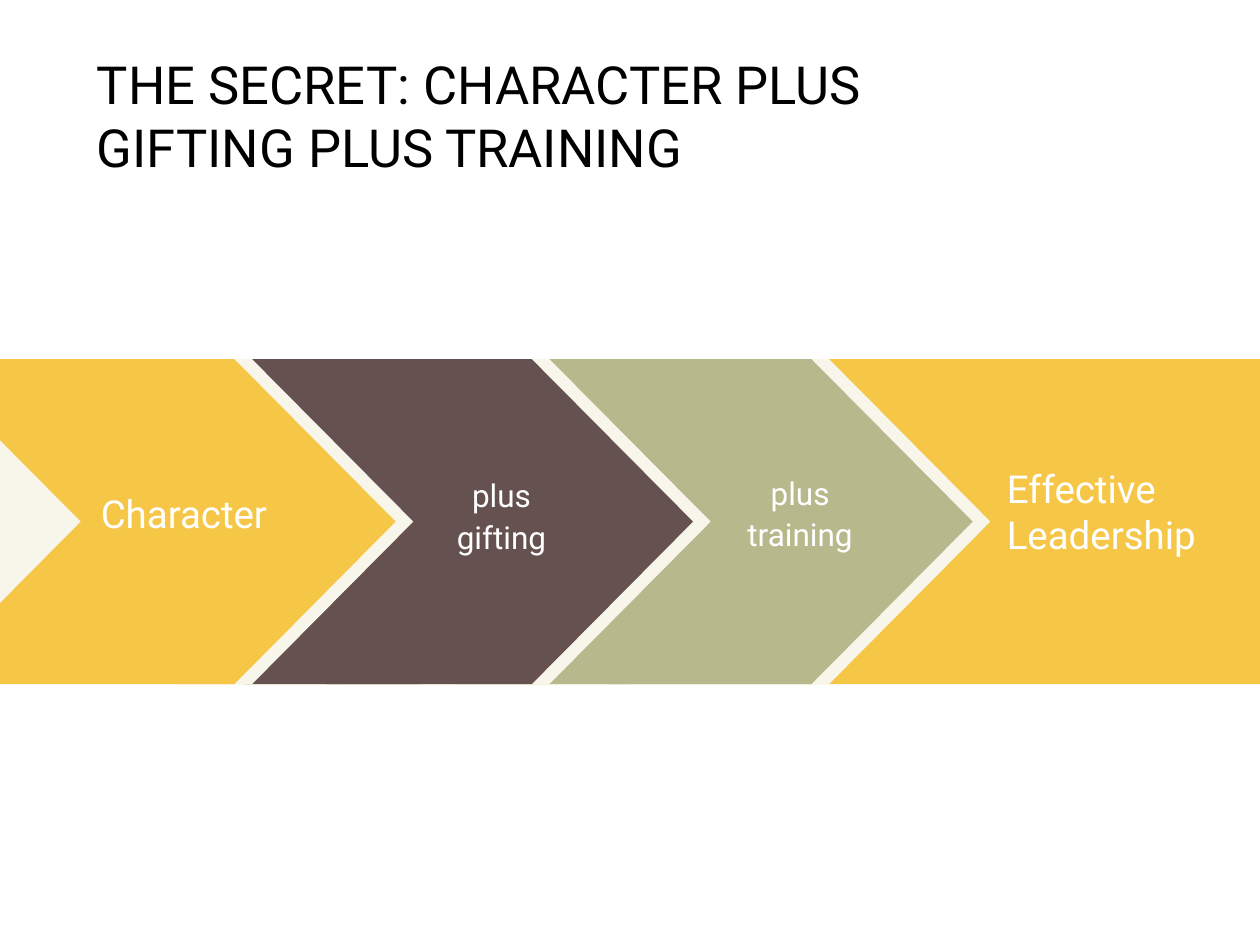
"""Build a slide with a band of arrows that lead to effective leadership."""
from pptx import Presentation
from pptx.dml.color import RGBColor
from pptx.enum import shapes, text
from pptx.util import Inches, Pt

COLORS = {"yellow": "F6C646", "brown": "655250", "green": "B7B98D",
          "cream": "F8F5EB", "white": "FFFFFF", "black": "000000"}
FONT = "Roboto"
BAND_TOP, BAND_HEIGHT = 2.85, 2.58
POINT_LENGTH, EDGE_WIDTH = 1.28, 0.14
NOTCH_DEPTH = 0.64

BLOCKS = [(1.42, 8.58, "yellow"), (3.61, 1.39, "green"), (1.94, 1.39, "brown")]
ARROWS = [(4.82, 7.72, "green"), (2.59, 5.5, "brown"), (0, 3.14, "yellow")]
LABELS = [
    (["THE SECRET: CHARACTER PLUS GIFTING PLUS TRAINING"],
     (0.72, 0.32, 7.34, 1.19), 30, "black", "LEFT", "MIDDLE", 1),
    (["Effective Leadership"],
     (7.94, 3.64, 1.85, 0.88), 22, "white", "LEFT", "TOP", 1),
    (["Character"], (0.75, 3.84, 3.04, 0.49), 22, "white", "LEFT", "TOP", 1),
    (["plus", "gifting"],
     (3.19, 3.7, 1.58, 0.77), 18, "white", "CENTER", "TOP", 1.1),
    (["plus", "training"],
     (5.56, 3.68, 1.58, 0.77), 18, "white", "CENTER", "TOP", 1.1),
]


def paint(shape, color):
    shape.shadow.inherit = False
    shape.fill.solid()
    shape.fill.fore_color.rgb = RGBColor.from_string(COLORS[color])
    shape.line.fill.background()


def add_band_shape(slide, kind, left, width, color):
    shape = slide.shapes.add_shape(kind, Inches(left), Inches(BAND_TOP),
                                   Inches(width), Inches(BAND_HEIGHT))
    paint(shape, color)
    return shape


def add_arrow(slide, left, tip, color):
    for offset, fill in ((EDGE_WIDTH, "cream"), (0, color)):
        arrow = add_band_shape(slide, shapes.MSO_SHAPE.PENTAGON,
                               left + offset, tip - left, fill)
        arrow.adjustments[0] = POINT_LENGTH / BAND_HEIGHT


def add_notch(slide):
    middle = BAND_TOP + BAND_HEIGHT / 2
    half = NOTCH_DEPTH * BAND_HEIGHT / 2 / POINT_LENGTH
    builder = slide.shapes.build_freeform(0, Inches(middle - half))
    builder.add_line_segments([(Inches(NOTCH_DEPTH), Inches(middle)),
                               (0, Inches(middle + half))])
    paint(builder.convert_to_shape(), "cream")


def add_label(slide, lines, place, size, color, alignment, anchor, spacing):
    frame = slide.shapes.add_textbox(*map(Inches, place)).text_frame
    frame.word_wrap = True
    frame.vertical_anchor = text.MSO_ANCHOR[anchor]
    frame.margin_left = frame.margin_right = Inches(0.05)
    frame.margin_top = frame.margin_bottom = Inches(0.05)
    frame.text = "\n".join(lines)
    for paragraph in frame.paragraphs:
        paragraph.alignment = text.PP_ALIGN[alignment]
        paragraph.line_spacing = spacing
        paragraph.font.name = FONT
        paragraph.font.size = Pt(size)
        paragraph.font.color.rgb = RGBColor.from_string(COLORS[color])


def main():
    presentation = Presentation()
    presentation.slide_width = Inches(10)
    presentation.slide_height = Inches(7.5)
    slide = presentation.slides.add_slide(presentation.slide_layouts[6])
    for left, width, color in BLOCKS:
        add_band_shape(slide, shapes.MSO_SHAPE.RECTANGLE, left, width, color)
    for arrow in ARROWS:
        add_arrow(slide, *arrow)
    add_notch(slide)
    for label in LABELS:
        add_label(slide, *label)
    presentation.save("out.pptx")


if __name__ == "__main__":
    main()
